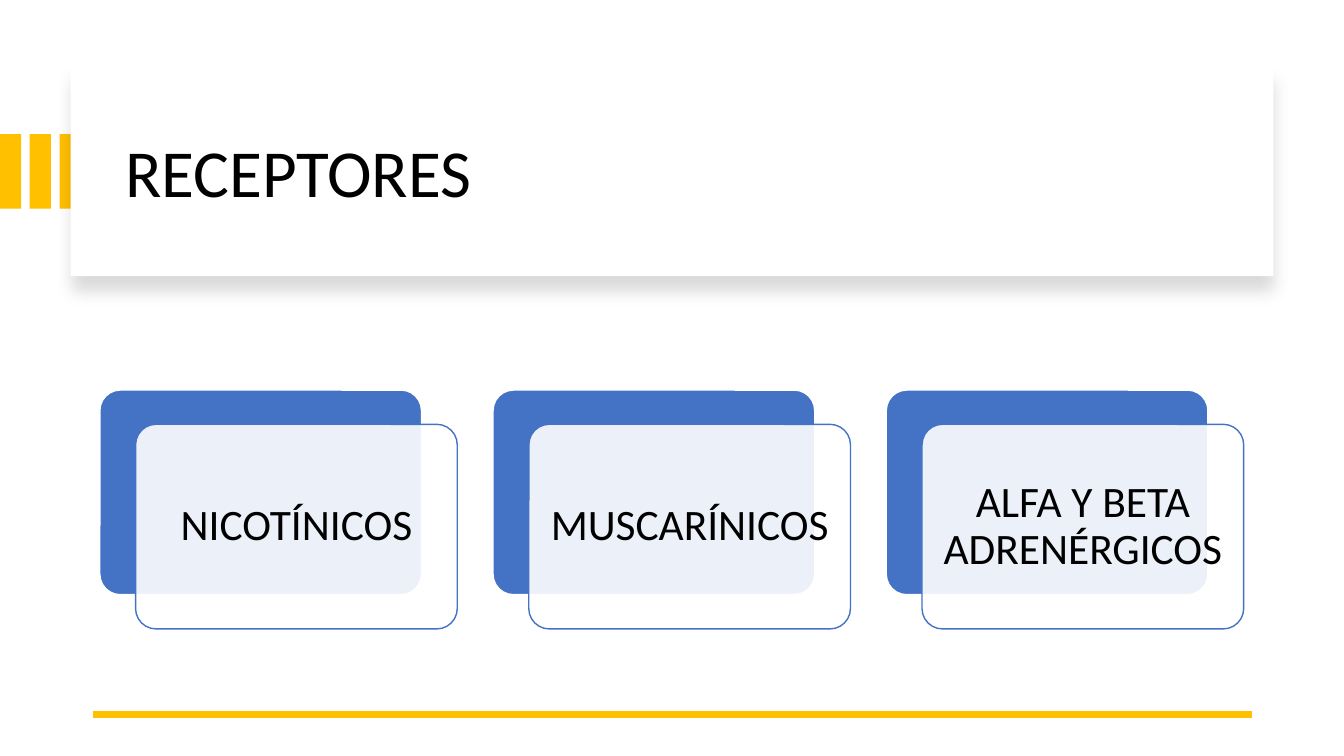
from dataclasses import dataclass

from lxml import etree
from pptx import Presentation
from pptx.dml.color import RGBColor
from pptx.enum.shapes import MSO_CONNECTOR, MSO_SHAPE
from pptx.enum.text import MSO_ANCHOR, MSO_AUTO_SIZE, PP_ALIGN
from pptx.oxml.ns import qn
from pptx.util import Inches, Pt

RECTANGLE = MSO_SHAPE.RECTANGLE
ROUNDED = MSO_SHAPE.ROUNDED_RECTANGLE
STRAIGHT = MSO_CONNECTOR.STRAIGHT
MIDDLE = MSO_ANCHOR.MIDDLE
NO_FIT = MSO_AUTO_SIZE.NONE
LEFT, CENTER = PP_ALIGN.LEFT, PP_ALIGN.CENTER

COLORS = {"white": "FFFFFF", "black": "000000", "gold": "FFC000", "blue": "4472C4"}
FONT = "Calibri"
RECEPTORS = ["NICOTÍNICOS", "MUSCARÍNICOS", "ALFA Y BETA ADRENÉRGICOS"]
STRIPE_COUNT = 3
STRIPE_STEP = 0.59 / 2
CARD_LEFT, CARD_TOP, CARD_STEP = 0.99, 3.87, 3.9
CARD_WIDTH, CARD_HEIGHT = 3.19, 2.03
CARD_SHIFT_X, CARD_SHIFT_Y = 0.355, 0.34


@dataclass
class Box:
    left: float
    top: float
    width: float
    height: float
    fill: str
    line: str | None = None
    preset: int = RECTANGLE


def color(name: str) -> RGBColor:
    return RGBColor.from_string(COLORS[name])


def draw_box(slide, box: Box):
    shape = slide.shapes.add_shape(
        box.preset, Inches(box.left), Inches(box.top), Inches(box.width), Inches(box.height)
    )
    shape.shadow.inherit = False
    shape.fill.solid()
    shape.fill.fore_color.rgb = color(box.fill)
    if box.line:
        shape.line.color.rgb = color(box.line)
        shape.line.width = Pt(1)
    else:
        shape.line.fill.background()
    if box.preset == ROUNDED:
        shape.adjustments[0] = 0.1
    return shape


def set_opacity(color_element, percent: int) -> None:
    alpha = etree.SubElement(color_element, qn("a:alpha"))
    alpha.set("val", str(percent * 1000))


def add_shadow(shape) -> None:
    effects = shape._element.spPr.find(qn("a:effectLst"))
    values = {"blurRad": Pt(11), "dist": Pt(10), "dir": 90 * 60000, "algn": "t", "rotWithShape": 0}
    shadow = etree.SubElement(effects, qn("a:outerShdw"))
    for name, value in values.items():
        shadow.set(name, str(value))
    shadow_color = etree.SubElement(shadow, qn("a:srgbClr"), val=COLORS["black"])
    set_opacity(shadow_color, 15)


def write_text(shape, text: str, size: float, alignment: int, inset: float) -> None:
    frame = shape.text_frame
    frame.text = text
    frame_format = {"word_wrap": True, "auto_size": NO_FIT, "vertical_anchor": MIDDLE}
    for side in ("left", "top", "right", "bottom"):
        frame_format[f"margin_{side}"] = Inches(inset)
    paragraph = frame.paragraphs[0]
    formats = [
        (frame, frame_format),
        (paragraph, {"alignment": alignment, "line_spacing": 0.9}),
        (paragraph.font, {"name": FONT, "size": Pt(size)}),
    ]
    for target, values in formats:
        for name, value in values.items():
            setattr(target, name, value)
    paragraph.font.color.rgb = color("black")


def draw_header(slide) -> None:
    for index in range(STRIPE_COUNT):
        draw_box(slide, Box(index * STRIPE_STEP, 1.33, 0.21, 0.74, "gold"))
    panel = draw_box(slide, Box(0.7, 0.67, 11.93, 2.07, "white"))
    add_shadow(panel)

    title = slide.shapes.title
    panel._element.addnext(title._element)
    position = {"left": 1.14, "top": 0.89, "width": 11.13, "height": 1.7}
    for name, value in position.items():
        setattr(title, name, Inches(value))
    write_text(title, "RECEPTORES", 48, LEFT, 0.1)


def draw_rule(slide) -> None:
    rule = slide.shapes.add_connector(
        STRAIGHT, Inches(12.42), Inches(7.09), Inches(0.92), Inches(7.09)
    )
    rule.line.color.rgb = color("gold")
    rule.line.width = Pt(4.5)
    etree.SubElement(rule._element.spPr, qn("a:effectLst"))


def draw_card(slide, left: float, label: str) -> None:
    draw_box(slide, Box(left, CARD_TOP, CARD_WIDTH, CARD_HEIGHT, "blue", "white", ROUNDED))
    front = draw_box(
        slide,
        Box(left + CARD_SHIFT_X, CARD_TOP + CARD_SHIFT_Y, CARD_WIDTH, CARD_HEIGHT,
            "white", "blue", ROUNDED),
    )
    fill = front._element.spPr.find(qn("a:solidFill"))
    set_opacity(fill[0], 90)
    write_text(front, label, 31, CENTER, 0.12)


def main() -> None:
    presentation = Presentation()
    presentation.slide_width = Inches(13.33)
    presentation.slide_height = Inches(7.5)
    slide = presentation.slides.add_slide(presentation.slide_layouts[5])
    draw_header(slide)
    draw_rule(slide)
    for index, label in enumerate(RECEPTORS):
        draw_card(slide, CARD_LEFT + index * CARD_STEP, label)
    presentation.save("out.pptx")


if __name__ == "__main__":
    main()
